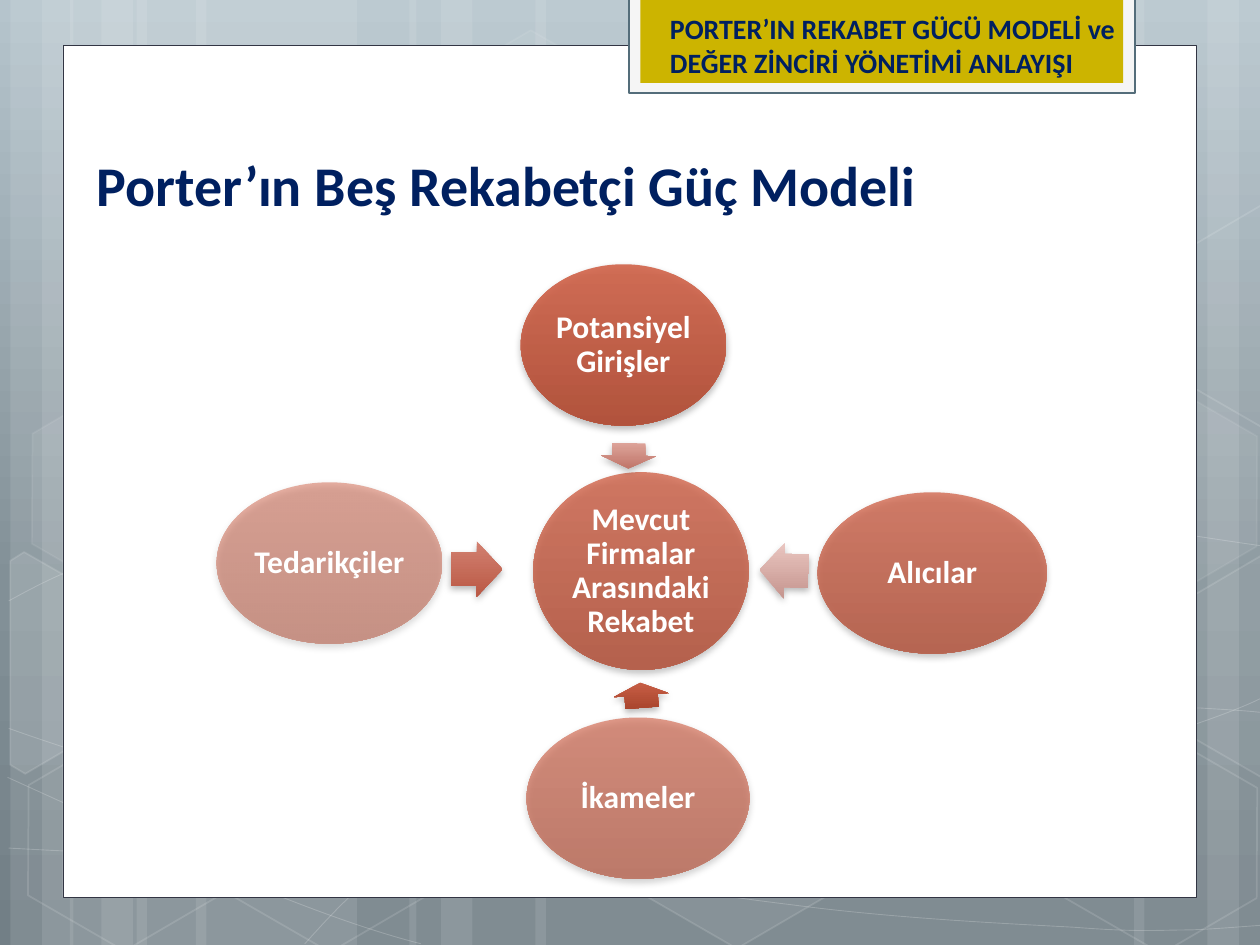
from math import cos, radians, sin

from lxml.etree import SubElement
from pptx import Presentation
from pptx.dml.color import RGBColor
from pptx.enum.shapes import MSO_SHAPE as Preset
from pptx.enum.text import MSO_ANCHOR as Anchor, MSO_AUTO_SIZE as AutoSize, PP_ALIGN as Align
from pptx.oxml.ns import qn
from pptx.util import Pt

WIDTH, HEIGHT = 720, 540
WHITE, NAVY = "FFFFFF", "002060"

# Backdrop: bands are (left, width), hexagons (left, top, fill %, line %)
BANDS = [(78, 126), (6, 36), (24, 60), (112, 126), (40, 36), (58, 60),
         (528, 126), (690, 36), (648, 60), (306, 222), (234, 36), (252, 60)]
HEXAGONS = [(240.5, 25.9, 4, 8), (357.8, 424.1, 6, 12), (7.9, 425.5, 0, 12),
            (10.1, 224.6, 7, 8), (125.3, 426.2, 0, 12), (542.2, 326.2, 10, 12),
            (600.5, 427, 0, 12), (600.5, 226.1, 7, 8)]
LEFT_HEXAGON = [(5.8, 320.4), (13.7, 315.4), (69.1, 347), (68.4, 410.4), (14.4, 442.1), (5.8, 437)]
RIGHT_HEXAGON = [(666.7, 349.2), (720.7, 317.5), (726.5, 321.1), (726.5, 441.4),
                 (721.4, 444.2), (666.7, 412.6)]
# Each curve is a start point followed by triples of Bézier points
CURVES = [
    [(5, 484.6), (43.9, 486.7), (82.8, 488.9), (136.8, 488.2), (190.8, 487.4), (257.8, 486),
     (329.8, 478.8), (401.8, 471.6), (504, 457.9), (570.2, 444.2), (635.8, 430.6),
     (703.4, 409), (725, 396.7)],
    [(5, 343.4), (25.9, 331.9), (46.8, 321.1), (87.1, 310.3), (128.2, 299.5), (186.5, 283.7),
     (249.8, 278.6), (313.9, 273.6), (391.7, 272.9), (470.9, 278.6), (550.1, 284.4),
     (681.8, 306.7), (725, 312.5)],
    [(4.3, 444.2), (91.4, 483.8), (177.8, 523.4), (240.5, 539.3)],
    [(5, 416.2), (27.4, 424.1), (50.4, 432), (92.2, 443.5), (133.9, 454.3), (196.6, 472.3),
     (257, 484.6), (316.8, 496.8), (392.4, 509.8), (452.2, 517), (511.9, 524.9), (576, 527.8),
     (614.2, 529.9), (651.6, 532.8), (661.7, 531.4), (680.4, 531.4), (699.1, 530.6),
     (712.1, 529.2), (725, 528.5)],
    [(174.2, 539.3), (187.2, 524.9), (200.2, 510.5), (217.4, 497.5), (234.7, 484.6),
     (259.2, 470.2), (279.4, 460.1), (299.5, 450), (311.8, 445.7), (338.4, 438.5),
     (364.3, 431.3), (412.6, 421.2), (437.8, 416.2), (463.7, 411.1), (467.3, 411.1),
     (489.6, 409.7), (511.9, 407.5), (547.2, 405.4), (571.7, 404.6), (596.9, 403.9),
     (637.9, 404.6), (637.9, 404.6), (654, 404.6), (670, 404.6), (686.2, 404.6),
     (699.1, 405.4), (711.4, 406.1), (717.8, 406.8), (724.3, 407.5), (722.2, 406.8),
     (724.3, 407.5)],
]

# Model, relative to its box: forces are (text, left, top, width, height, opacity %)
FORCES = [("Mevcut Firmalar Arasındaki Rekabet", 180.9, 118.8, 123.1, 113, 80),
          ("Potansiyel Girişler", 173.8, 0, 117.4, 92.2, 90),
          ("Alıcılar", 343.4, 130.3, 131, 92.2, 77),
          ("İkameler", 177.1, 259, 127.4, 92.2, 63),
          ("Tedarikçiler", 0, 124.6, 128.9, 92.2, 50)]
# Arrows are (left, top, width, rotation, first colour, last colour)
ARROWS = [(235.4, 230.4, 14.4, 265.7, "C85F46", "A9452D"),
          (133.9, 158.4, 29.5, 0.3, "D28070", "BA5945"),
          (228.2, 93.6, 14.4, 90.8, "DDA399", "C0766A"),
          (310.3, 159.1, 28.1, 181.5, "EAC6C1", "C5958E")]


def color(hex_text):
    return RGBColor.from_string(hex_text)


def set_alpha(parent, percent):
    if percent < 100:
        SubElement(next(parent.iter(qn("a:srgbClr"))), qn("a:alpha"), val=str(percent * 1000))


def set_gradient(fill, parent, stops, alpha=100):
    """Apply a top-to-bottom gradient of (position, colour) stops."""
    fill.gradient()
    gradient = next(parent.iter(qn("a:gradFill")))
    gradient.set("rotWithShape", "0")
    stop_list = gradient.find(qn("a:gsLst"))
    stop_list.clear()
    for position, hex_text in stops:
        stop = SubElement(stop_list, qn("a:gs"), pos=str(position * 1000))
        SubElement(stop, qn("a:srgbClr"), val=hex_text)
        set_alpha(stop, alpha)
    gradient.find(qn("a:lin")).set("ang", "5400000")


def paint(shape, fill=None, fill_alpha=100, line=None, line_width=1, line_alpha=100):
    shape.shadow.inherit = False
    if fill and fill_alpha:
        shape.fill.solid()
        shape.fill.fore_color.rgb = color(fill)
        set_alpha(shape.element.spPr.find(qn("a:solidFill")), fill_alpha)
    else:
        shape.fill.background()
    if line:
        shape.line.color.rgb = color(line)
        shape.line.width = Pt(line_width)
        set_alpha(shape.element.spPr.find(qn("a:ln")), line_alpha)
    else:
        shape.line.fill.background()


def add_preset(shapes, preset, left, top, width, height, **style):
    shape = shapes.add_shape(preset, Pt(left), Pt(top), Pt(width), Pt(height))
    paint(shape, **style)
    return shape


def add_outline(shapes, points, close, **style):
    points = [(Pt(x), Pt(y)) for x, y in points]
    builder = shapes.build_freeform(*points[0], scale=1.0)
    builder.add_line_segments(points[1:], close=close)
    shape = builder.convert_to_shape()
    paint(shape, **style)
    return shape


def add_curve(shapes, points, **style):
    shape = add_outline(shapes, points, False, **style)
    outline = next(shape.element.iter(qn("a:path")))
    segments = outline.findall(qn("a:lnTo"))
    for index in range(0, len(segments), 3):
        bezier = SubElement(outline, qn("a:cubicBezTo"))
        for segment in segments[index:index + 3]:
            bezier.append(segment[0])
            outline.remove(segment)


def add_cut_hexagon(shapes, points, center, **style):
    """Draw the points in a frame that is turned by 30 degrees around its center."""
    cosine, sine = cos(radians(30)), sin(radians(30))
    offsets = [(x - center[0], y - center[1]) for x, y in points]
    turned = [(center[0] + x * cosine + y * sine, center[1] - x * sine + y * cosine)
              for x, y in offsets]
    add_outline(shapes, turned, True, **style).rotation = 30


def write(shape, text, size=18, hex_text=WHITE, align=Align.LEFT, anchor=Anchor.TOP,
          spacing=None, inset=None):
    frame = shape.text_frame
    frame.word_wrap, frame.auto_size, frame.vertical_anchor = True, AutoSize.NONE, anchor
    if inset is not None:
        frame.margin_left = frame.margin_right = Pt(inset)
        frame.margin_top = frame.margin_bottom = Pt(inset)
    paragraph = frame.paragraphs[0]
    paragraph.alignment, paragraph.line_spacing = align, spacing
    run = paragraph.add_run()
    run.text = text
    run.font.name, run.font.size, run.font.bold = "Calibri", Pt(size), True
    run.font.color.rgb = color(hex_text)


def add_backdrop(slide):
    set_gradient(slide.background.fill, slide.element,
                 [(0, "B5C4CC"), (62, "829097"), (100, "727F86")])
    shapes = slide.shapes.add_group_shape().shapes
    for left, width in BANDS:
        add_preset(shapes, Preset.RECTANGLE, left, 0, width, HEIGHT, fill=WHITE, fill_alpha=10)
    for curve in CURVES:
        add_curve(shapes, curve, line=WHITE, line_width=0.5, line_alpha=20)
    for left, top, fill_alpha, line_alpha in HEXAGONS:
        hexagon = add_preset(shapes, Preset.HEXAGON, left, top, 126, 109.4, fill=WHITE,
                             fill_alpha=fill_alpha, line=WHITE, line_alpha=line_alpha)
        hexagon.adjustments[0] = 0.285
        hexagon.rotation = 30
    # Hexagons cut off by the slide edges
    upper_right = [(x, y - 200.2) for x, y in RIGHT_HEXAGON]
    for points, center, fill_alpha in ((LEFT_HEXAGON, (25.9, 385.2), 10),
                                       (RIGHT_HEXAGON, (709.2, 374.4), 4),
                                       (upper_right, (709.2, 174.2), 0)):
        add_cut_hexagon(shapes, points, center, fill=WHITE, fill_alpha=fill_alpha,
                        line=WHITE, line_alpha=12)


def add_header(slide, left, top, width, height):
    add_preset(slide.shapes, Preset.RECTANGLE, left, top, width, height,
               fill="F5F5F5", line="546D7A", line_width=1.25)
    add_preset(slide.shapes, Preset.RECTANGLE, left + 6.7, top, width - 13.5, height - 5.9,
               fill="CCB400")
    label = slide.shapes.add_textbox(Pt(left + 16.6), Pt(top + 4.5), Pt(273.6), Pt(85))
    write(label, "PORTER’IN REKABET GÜCÜ MODELİ ve DEĞER ZİNCİRİ YÖNETİMİ ANLAYIŞI", 16, NAVY)


def add_title(slide, left, top, width, height):
    title = slide.shapes.title
    title.left, title.top, title.width, title.height = Pt(left), Pt(top), Pt(width), Pt(height)
    write(title, "Porter’ın Beş Rekabetçi Güç Modeli", 32, NAVY)
    title.element.getparent().append(title.element)  # bring in front of the card


def add_model_part(shapes, preset, box, colors, alpha=100):
    shape = add_preset(shapes, preset, *box)
    properties = shape.element.spPr
    set_gradient(shape.fill, properties, list(zip((0, 100), colors)), alpha)
    shadow = SubElement(properties.find(qn("a:effectLst")), qn("a:outerShdw"),
                        blurRad=str(Pt(4)), dist=str(Pt(2)), dir="5400000", rotWithShape="0")
    SubElement(shadow, qn("a:srgbClr"), val="000000")
    set_alpha(shadow, 28)
    return shape


def add_model(slide, left, top):
    shapes = slide.shapes.add_group_shape().shapes
    for text, x, y, width, height, alpha in FORCES:
        x, y = left + x, top + y
        add_model_part(shapes, Preset.OVAL, (x, y, width, height), ("D16349", "B1482F"), alpha)
        # Label in the rectangle inscribed in the ellipse
        inner_width, inner_height = width * 0.707, height * 0.707
        label = shapes.add_textbox(Pt(x + (width - inner_width) / 2),
                                   Pt(y + (height - inner_height) / 2),
                                   Pt(inner_width), Pt(inner_height))
        write(label, text, align=Align.CENTER, anchor=Anchor.MIDDLE, spacing=0.9, inset=2)
    for x, y, width, rotation, *colors in ARROWS:
        arrow = add_model_part(shapes, Preset.RIGHT_ARROW, (left + x, top + y, width, 31.7), colors)
        arrow.adjustments[0], arrow.adjustments[1] = 0.6, 0.5
        arrow.rotation = rotation


def main():
    presentation = Presentation()
    presentation.slide_width, presentation.slide_height = Pt(WIDTH), Pt(HEIGHT)
    slide = presentation.slides.add_slide(presentation.slide_layouts[5])
    add_backdrop(slide)
    # White content card
    add_preset(slide.shapes, Preset.RECTANGLE, 36, 25.9, 648, 487,
               fill=WHITE, line="323543", line_width=0.5)
    add_header(slide, 359.2, -1.4, 289.4, 54.7)
    add_title(slide, 48.2, 82.4, 527, 46.1)
    add_model(slide, 123.8, 151)
    presentation.save("out.pptx")


if __name__ == "__main__":
    main()
